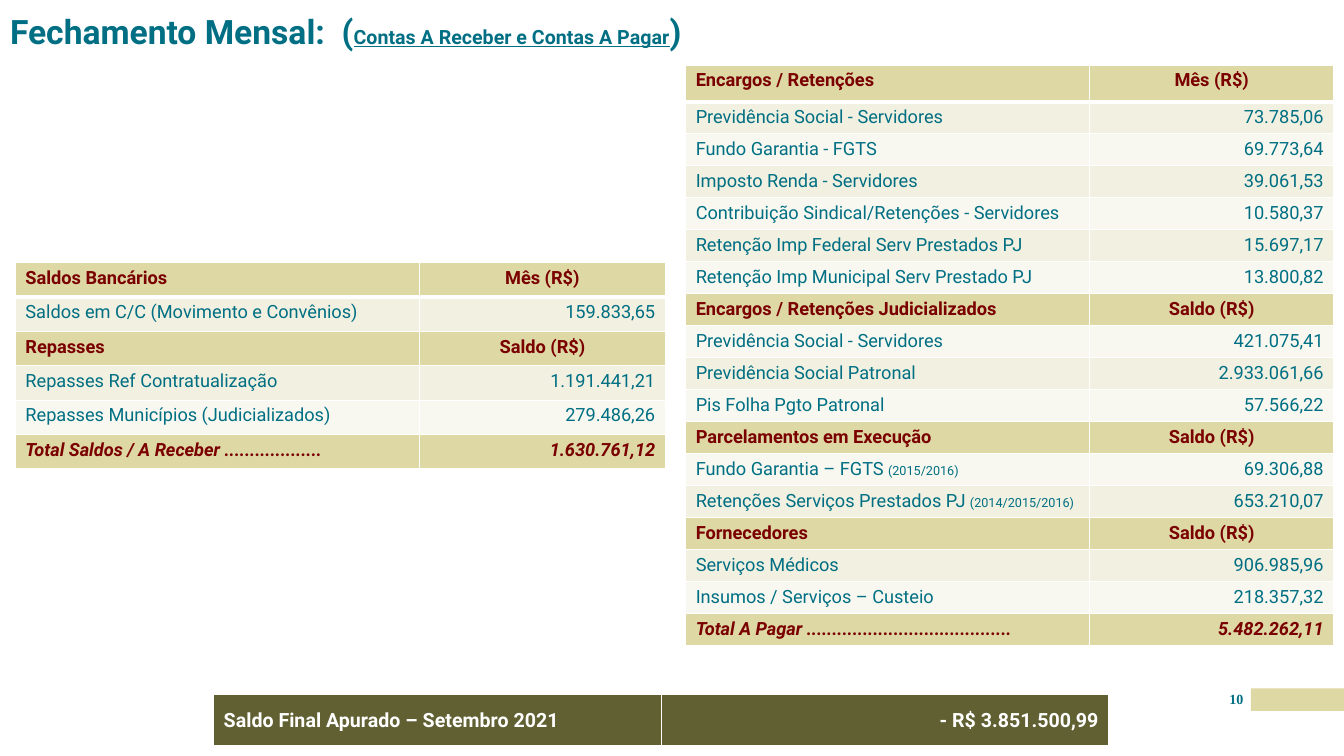
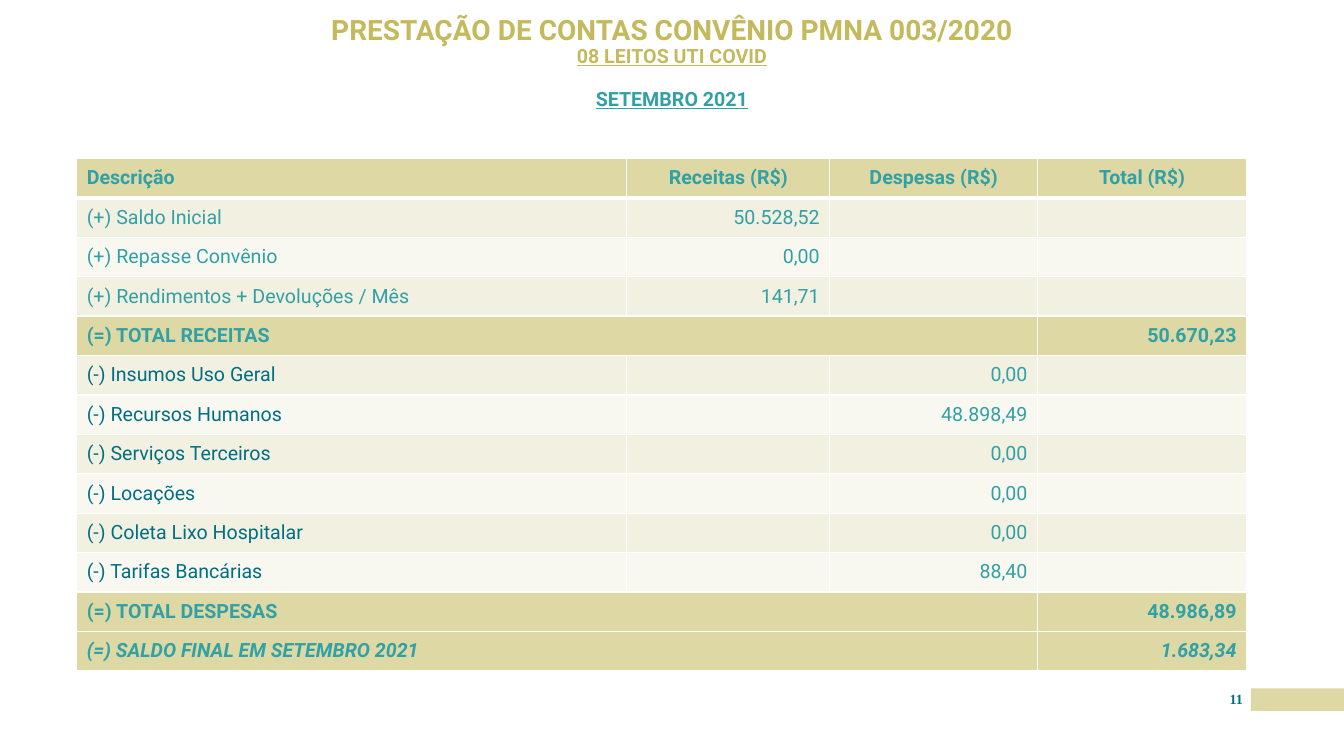
from dataclasses import dataclass

from lxml import etree
from pptx import Presentation
from pptx.dml.color import RGBColor
from pptx.enum import shapes, text
from pptx.oxml.ns import qn
from pptx.util import Pt


@dataclass(frozen=True)
class Theme:
    petrol: str = "006F83"
    teal: str = "32A1A6"
    maroon: str = "7A0000"
    gold: str = "C4BA5D"
    olive: str = "606032"
    sand: str = "DED8A4"
    stripe_dark: str = "F2F0E0"
    stripe_light: str = "F9F8F0"
    white: str = "FFFFFF"
    font: str = "Roboto"
    number_font: str = "Times New Roman"
    title: int = 24
    heading: int = 20
    large: int = 14
    body: int = 13
    number: int = 10
    note: int = 9


T = Theme()
LEFT, CENTER, RIGHT = text.PP_ALIGN.LEFT, text.PP_ALIGN.CENTER, text.PP_ALIGN.RIGHT
TOP, MIDDLE = text.MSO_ANCHOR.TOP, text.MSO_ANCHOR.MIDDLE


def write(paragraph, pieces, size, ink, bold=True, italic=False, align=LEFT, font=T.font):
    """Fill a paragraph; each piece is (text, own size or None, underlined)."""
    paragraph.alignment = align
    paragraph.font.name = font
    paragraph.font.size = Pt(size)
    paragraph.font.bold = bold
    paragraph.font.italic = italic
    paragraph.font.color.rgb = RGBColor.from_string(ink)
    for wording, own_size, underlined in pieces:
        run = paragraph.add_run()
        run.text = wording
        if own_size:
            run.font.size = Pt(own_size)
        if underlined:
            run.font.underline = True


def add_ledger(slide, left, top, widths, heights, rows, strong_ink, item_ink,
               size=T.body, anchor=TOP, band=T.sand):
    """Draw rows of (kind, label, amounts...); kinds are head, item, cost, total, final."""
    table = slide.shapes.add_table(len(rows), len(widths), Pt(left), Pt(top),
                                   Pt(sum(widths)), Pt(sum(heights))).table
    table.first_row = table.horz_banding = False
    for column, width in zip(table.columns, widths):
        column.width = Pt(width)
    for r, (kind, *values) in enumerate(rows):
        table.rows[r].height = Pt(heights[r])
        strong = kind in ("head", "total", "final")
        stripe = T.stripe_dark if r % 2 else T.stripe_light
        for c, value in enumerate(values):
            cell = table.cell(r, c)
            cell.vertical_anchor = anchor
            if anchor == MIDDLE:
                cell.margin_top = cell.margin_bottom = 0
            edges = {"lnL": 1, "lnR": 1, "lnT": 3 if r == 1 else 1, "lnB": 3 if r == 0 else 1}
            for edge, weight in edges.items():
                line = etree.SubElement(cell._tc.get_or_add_tcPr(), qn(f"a:{edge}"), w=str(Pt(weight)))
                solid = etree.SubElement(line, qn("a:solidFill"))
                etree.SubElement(solid, qn("a:srgbClr"), val=T.white)
            cell.fill.solid()
            cell.fill.fore_color.rgb = RGBColor.from_string(band if strong else stripe)

            ink = strong_ink if strong else item_ink
            if kind == "cost" and c == 0:
                ink = T.petrol
            align = LEFT if c == 0 else CENTER if kind == "head" else RIGHT
            label, note = value if isinstance(value, tuple) else (value, "")
            pieces = [(label, None, False), (note, T.note, False)]
            write(cell.text_frame.paragraphs[0], [p for p in pieces if p[0]],
                  size, ink, strong, kind == "final", align)
        if kind in ("total", "final") and len(widths) > 2:
            table.cell(r, 0).merge(table.cell(r, len(widths) - 2))


deck = Presentation()
deck.slide_width, deck.slide_height = Pt(960), Pt(540)
monthly, agreement = [deck.slides.add_slide(deck.slide_layouts[6]) for _ in range(2)]

# Text boxes: slide, (left, top, width, height), paragraphs of (pieces, size, ink, align, font, space before)
boxes = [
    (monthly, (7.2, 10.8, 936, 36), [
        ([("Fechamento Mensal:  (", None, False),
          ("Contas A Receber e Contas A Pagar", T.large, True),
          (")", None, False)], T.title, T.petrol, LEFT, T.font, 0)]),
    (agreement, (0, 12, 960, 90), [
        ([("PRESTAÇÃO DE CONTAS CONVÊNIO PMNA 003/2020", None, False)],
         T.heading, T.gold, CENTER, T.font, 0),
        ([("08 LEITOS UTI COVID", None, True)], T.large, T.gold, CENTER, T.font, 0),
        ([("SETEMBRO 2021", None, True)], T.large, T.teal, CENTER, T.font, 15)]),
]

for number, slide in enumerate((monthly, agreement), start=10):
    strip = slide.shapes.add_shape(shapes.MSO_SHAPE.RECTANGLE, Pt(893.6), Pt(491.8), Pt(66.4), Pt(16))
    strip.shadow.inherit = False
    strip.fill.solid()
    strip.fill.fore_color.rgb = RGBColor.from_string(T.sand)
    strip.line.fill.background()
    boxes.append((slide, (872.6, 493.2, 21, 18), [
        ([(str(number), None, False)], T.number, T.petrol, CENTER, T.number_font, 0)]))

for slide, place, paragraphs in boxes:
    frame = slide.shapes.add_textbox(*map(Pt, place)).text_frame
    frame.word_wrap = True
    frame.margin_left = frame.margin_right = frame.margin_top = frame.margin_bottom = 0
    for i, (pieces, size, ink, align, font, gap) in enumerate(paragraphs):
        paragraph = frame.add_paragraph() if i else frame.paragraphs[0]
        write(paragraph, pieces, size, ink, align=align, font=font)
        paragraph.space_before = Pt(gap)
        if font == T.font:
            paragraph.line_spacing = 0.9

payables = [
    ("head", "Encargos / Retenções", "Mês (R$)"),
    ("item", "Previdência Social - Servidores", "73.785,06"),
    ("item", "Fundo Garantia - FGTS", "69.773,64"),
    ("item", "Imposto Renda - Servidores", "39.061,53"),
    ("item", "Contribuição Sindical/Retenções - Servidores", "10.580,37"),
    ("item", "Retenção Imp Federal Serv Prestados PJ", "15.697,17"),
    ("item", "Retenção Imp Municipal Serv Prestado PJ", "13.800,82"),
    ("head", "Encargos / Retenções Judicializados", "Saldo (R$)"),
    ("item", "Previdência Social - Servidores", "421.075,41"),
    ("item", "Previdência Social Patronal", "2.933.061,66"),
    ("item", "Pis Folha Pgto Patronal", "57.566,22"),
    ("head", "Parcelamentos em Execução", "Saldo (R$)"),
    ("item", ("Fundo Garantia – FGTS ", "(2015/2016)"), "69.306,88"),
    ("item", ("Retenções Serviços Prestados PJ ", "(2014/2015/2016)"), "653.210,07"),
    ("head", "Fornecedores", "Saldo (R$)"),
    ("item", "Serviços Médicos", "906.985,96"),
    ("item", "Insumos / Serviços – Custeio", "218.357,32"),
    ("final", "Total A Pagar ........................................", "5.482.262,11"),
]
add_ledger(monthly, 489.8, 46.4, [288.6, 174.2], [26.4] + [22.8] * 17, payables, T.maroon, T.petrol)

receivables = [
    ("head", "Saldos Bancários", "Mês (R$)"),
    ("item", "Saldos em C/C (Movimento e Convênios)", "159.833,65"),
    ("head", "Repasses", "Saldo (R$)"),
    ("item", "Repasses Ref Contratualização", "1.191.441,21"),
    ("item", "Repasses Municípios (Judicializados)", "279.486,26"),
    ("final", "Total Saldos / A Receber ...................", "1.630.761,12"),
]
add_ledger(monthly, 11, 187.5, [288.6, 175.6], [24.6] * 6, receivables, T.maroon, T.petrol)

balance = [("total", "Saldo Final Apurado – Setembro 2021", "- R$ 3.851.500,99")]
add_ledger(monthly, 152.6, 496.2, [319.7, 319.7], [37], balance, T.white, T.white,
           T.large, MIDDLE, T.olive)

statement = [
    ("head", "Descrição", "Receitas (R$)", "Despesas (R$)", "Total (R$)"),
    ("item", "(+) Saldo Inicial", "50.528,52", "", ""),
    ("item", "(+) Repasse Convênio", "0,00", "", ""),
    ("item", "(+) Rendimentos + Devoluções / Mês", "141,71", "", ""),
    ("total", "(=) TOTAL RECEITAS", "", "", "50.670,23"),
    ("cost", "(-) Insumos Uso Geral", "", "0,00", ""),
    ("cost", "(-) Recursos Humanos", "", "48.898,49", ""),
    ("cost", "(-) Serviços Terceiros", "", "0,00", ""),
    ("cost", "(-) Locações", "", "0,00", ""),
    ("cost", "(-) Coleta Lixo Hospitalar", "", "0,00", ""),
    ("cost", "(-) Tarifas Bancárias", "", "88,40", ""),
    ("total", "(=) TOTAL DESPESAS", "", "", "48.986,89"),
    ("final", "(=) SALDO FINAL EM SETEMBRO 2021", "", "", "1.683,34"),
]
add_ledger(agreement, 54.8, 113.2, [393, 145, 148.4, 149.4], [28.15] * 13, statement,
           T.teal, T.teal, T.large, MIDDLE)

deck.save("out.pptx")
